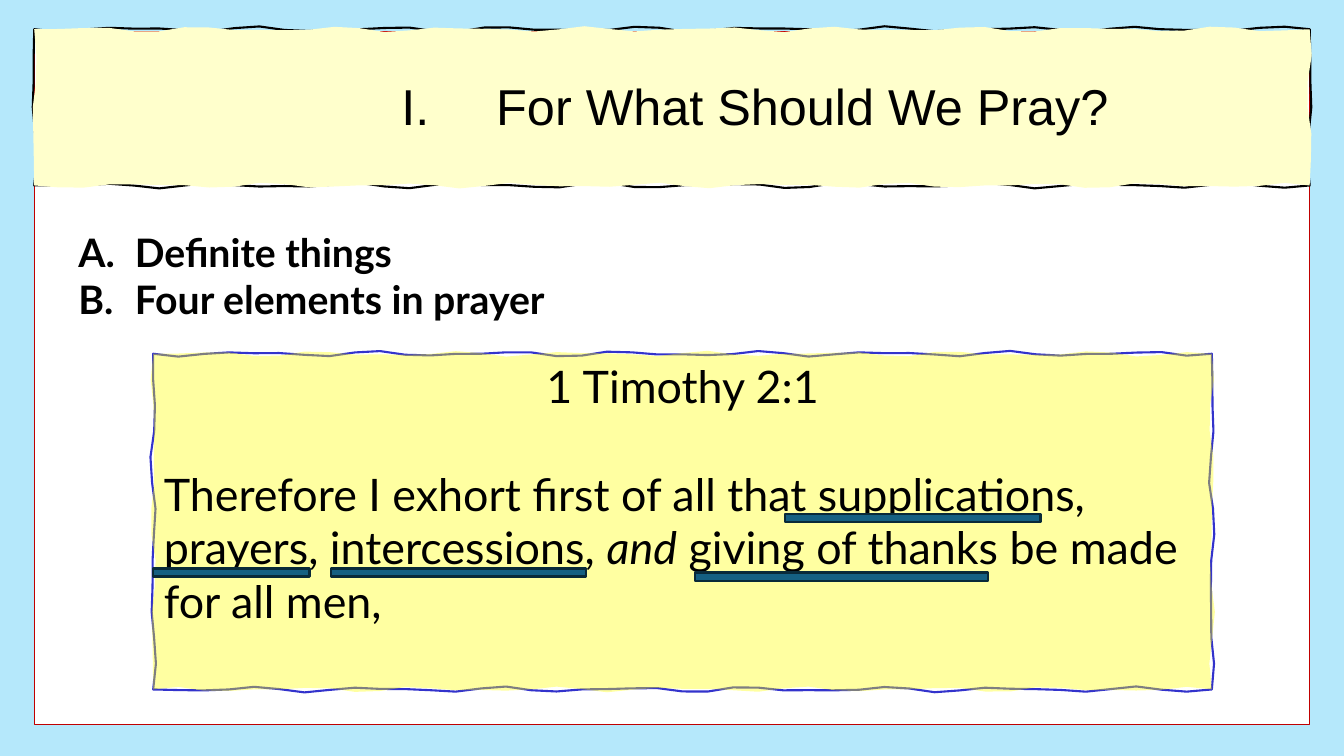
import math
from dataclasses import dataclass
from typing import Any, Optional

import pptx
import pptx.dml.color
import pptx.enum.shapes
import pptx.enum.text
import pptx.oxml
import pptx.oxml.ns
import pptx.util

Inches = pptx.util.Inches
Pt = pptx.util.Pt
RGBColor = pptx.dml.color.RGBColor
Align = pptx.enum.text.PP_ALIGN
Anchor = pptx.enum.text.MSO_ANCHOR

SKY = RGBColor(0xB5, 0xE8, 0xFB)
WHITE = RGBColor(0xFF, 0xFF, 0xFF)
RED = RGBColor(0xC0, 0x00, 0x00)
CREAM = RGBColor(0xFF, 0xFF, 0xCC)
YELLOW = RGBColor(0xFF, 0xFF, 0x00)
BLUE = RGBColor(0x33, 0x33, 0xCC)
TEAL = RGBColor(0x15, 0x60, 0x82)
NAVY = RGBColor(0x09, 0x2A, 0x39)
BLACK = RGBColor(0x00, 0x00, 0x00)

WOBBLE = 0.03  # reach of the rough edges, in inches
STEP = 0.25    # distance between points on a rough edge


@dataclass
class Box:
    left: float
    top: float
    width: float
    height: float


@dataclass
class Span:
    text: str
    italic: bool = False


@dataclass
class Para:
    spans: list[Span]
    align: Any = Align.LEFT
    space_before: float = 0
    numbering: str = ""
    hang: float = 0


UNDERLINES = [
    Box(1.52, 5.64, 1.55, 0.08),
    Box(3.28, 5.64, 2.53, 0.08),
    Box(6.89, 5.68, 2.91, 0.08),
    Box(7.79, 5.1, 2.53, 0.08),
]


def paint(shape: Any, fill: Optional[RGBColor], line: Optional[RGBColor],
          weight: float = 1.5) -> None:
    shape.shadow.inherit = False
    if fill is None:
        shape.fill.background()
    else:
        shape.fill.solid()
        shape.fill.fore_color.rgb = fill
    if line is None:
        shape.line.fill.background()
    else:
        shape.line.color.rgb = line
        shape.line.width = Pt(weight)


def add_rectangle(page: Any, box: Box, fill: RGBColor, line: RGBColor, weight: float) -> None:
    shape = page.shapes.add_shape(
        pptx.enum.shapes.MSO_SHAPE.RECTANGLE,
        Inches(box.left), Inches(box.top), Inches(box.width), Inches(box.height))
    paint(shape, fill, line, weight)


def rough_points(box: Box, phase: float) -> list[tuple[int, int]]:
    """Walk clockwise round the box, swaying across each edge and resting at its corners."""
    right, bottom = box.left + box.width, box.top + box.height
    edges = [
        (box.left, box.top, 1, 0, box.width),
        (right, box.top, 0, 1, box.height),
        (right, bottom, -1, 0, box.width),
        (box.left, bottom, 0, -1, box.height),
    ]
    points = []
    for number, (x, y, across, down, length) in enumerate(edges):
        count = round(length / STEP)
        for index in range(count):
            along = length * index / count
            taper = min(1, 5 * along, 5 * (length - along))
            turn = phase + 2 * number
            sway = WOBBLE * taper * (0.6 * math.sin(5 * along + turn)
                                     + 0.4 * math.sin(8 * along + 2 * turn))
            points.append((Inches(x + across * along - down * sway),
                           Inches(y + down * along + across * sway)))
    return points


def add_rough_shape(page: Any, box: Box, phase: float, fill: Optional[RGBColor],
                    line: Optional[RGBColor]) -> Any:
    first, *others = rough_points(box, phase)
    builder = page.shapes.build_freeform(*first)
    builder.add_line_segments(others, close=True)
    shape = builder.convert_to_shape()
    paint(shape, fill, line)
    return shape


def add_rough_panel(page: Any, box: Box, fill: RGBColor, line: RGBColor) -> Any:
    add_rough_shape(page, box, 0, None, line)
    return add_rough_shape(page, box, 2.5, fill, None)


def set_opacity(shape: Any, percent: int) -> None:
    colour = shape._element.spPr.find(
        pptx.oxml.ns.qn("a:solidFill") + "/" + pptx.oxml.ns.qn("a:srgbClr"))
    colour.append(pptx.oxml.parse_xml(
        f'<a:alpha {pptx.oxml.ns.nsdecls("a")} val="{percent * 1000}"/>'))


def write(frame: Any, paras: list[Para], formats: dict[str, Any]) -> None:
    frame.word_wrap = True
    frame.vertical_anchor = Anchor.TOP
    for index, para in enumerate(paras):
        target = frame.add_paragraph() if index else frame.paragraphs[0]
        target.alignment = para.align
        if para.space_before:
            target.space_before = Pt(para.space_before)
        if para.numbering:
            properties = target._p.get_or_add_pPr()
            properties.set("marL", str(Inches(para.hang)))
            properties.set("indent", str(-Inches(para.hang)))
            properties.append(pptx.oxml.parse_xml(
                f'<a:buAutoNum {pptx.oxml.ns.nsdecls("a")} type="{para.numbering}"/>'))
        for span in para.spans:
            run = target.add_run()
            run.text = span.text
            for name, value in formats.items():
                setattr(run.font, name, value)
            run.font.color.rgb = BLACK
            if span.italic:
                run.font.italic = True


def add_text(page: Any, box: Box, paras: list[Para], formats: dict[str, Any]) -> None:
    shape = page.shapes.add_textbox(
        Inches(box.left), Inches(box.top), Inches(box.width), Inches(box.height))
    write(shape.text_frame, paras, formats)


def main() -> None:
    deck = pptx.Presentation()
    deck.slide_width, deck.slide_height = Inches(13.33), Inches(7.5)
    page = deck.slides.add_slide(deck.slide_layouts[6])
    page.background.fill.solid()
    page.background.fill.fore_color.rgb = SKY

    # White sheet and title band
    add_rectangle(page, Box(0.34, 0.31, 12.65, 6.88), WHITE, RED, 1)
    add_rough_panel(page, Box(0.34, 0.29, 12.65, 1.55), CREAM, BLACK)
    add_text(page, Box(1.99, 0.7, 11, 0.71),
             [Para([Span("For What Should We Pray?")], Align.CENTER,
                   numbering="romanUcPeriod", hang=0.94)],
             {"name": "Arial", "size": Pt(36)})

    # Lettered points
    points = ["Definite things", "Four elements in prayer"]
    add_text(page, Box(0.68, 2.22, 11.97, 1.04),
             [Para([Span(point)], numbering="alphaUcPeriod", hang=0.56) for point in points],
             {"name": "Lato", "size": Pt(28), "bold": True})

    # Scripture panel
    panel = add_rough_panel(page, Box(1.52, 3.51, 10.5, 3.33), YELLOW, BLUE)
    set_opacity(panel, 37)
    margins = {"margin_left": 0.13, "margin_right": 0.13, "margin_top": 0.08}
    for name, value in margins.items():
        setattr(panel.text_frame, name, Inches(value))
    verse = [
        Span("Therefore I exhort first of all that supplications, prayers, intercessions, "),
        Span("and", italic=True),
        Span(" giving of thanks be made for all men,"),
    ]
    write(panel.text_frame,
          [Para([Span("1 Timothy 2:1")], Align.CENTER), Para(verse, space_before=38.4)],
          {"name": "Lato", "size": Pt(32)})

    # Bars under the four elements
    for bar in UNDERLINES:
        add_rectangle(page, bar, TEAL, NAVY, 1.5)

    deck.save("out.pptx")


if __name__ == "__main__":
    main()
